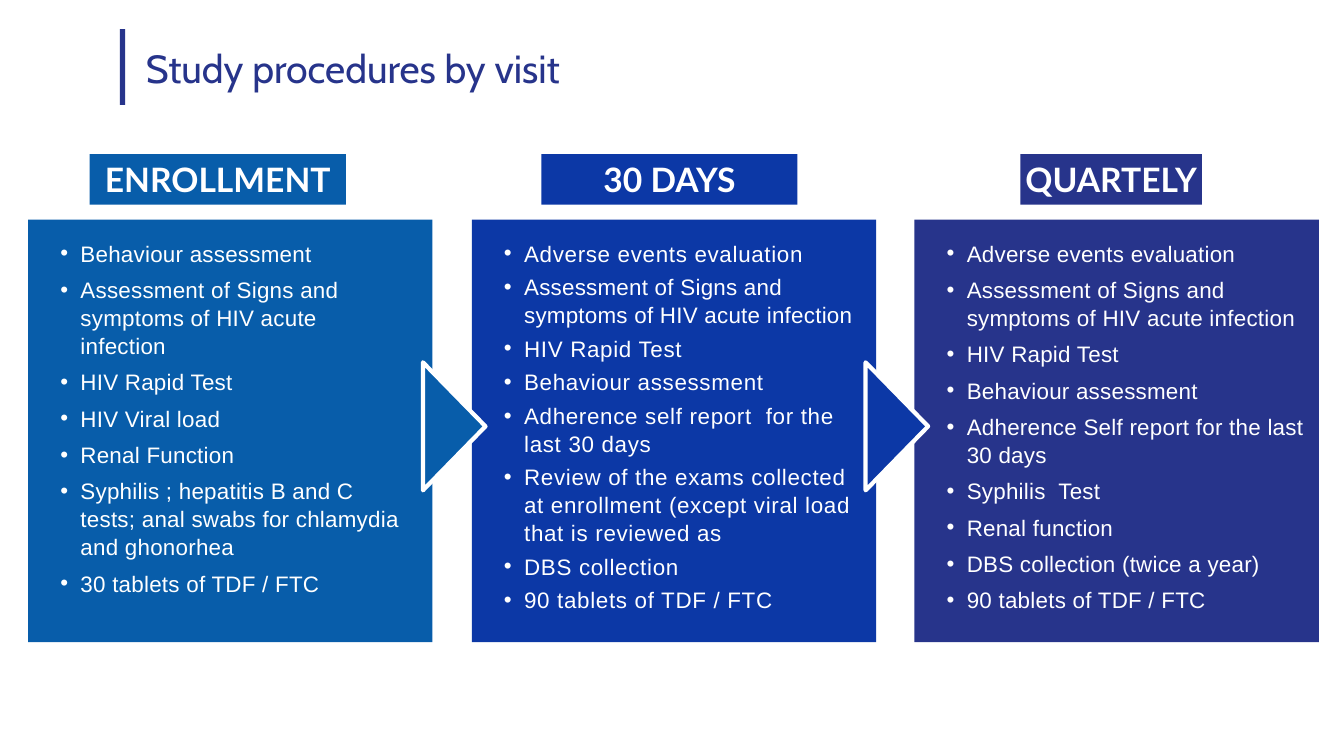
from lxml import etree
from pptx import Presentation
from pptx import util as u
from pptx.dml.color import RGBColor
from pptx.enum import shapes, text
from pptx.oxml.ns import qn

WHITE = RGBColor(0xFF, 0xFF, 0xFF)
SKY = RGBColor(0x08, 0x5D, 0xAA)
ROYAL = RGBColor(0x0C, 0x38, 0xA6)
NAVY = RGBColor(0x27, 0x34, 0x8B)

CARD_TOP, CARD_WIDTH, CARD_HEIGHT = 2.18, 4.01, 4.19
LABEL_TOP, LABEL_HEIGHT = 1.53, 0.5
ARROW_BASE, ARROW_DEPTH = 1.27, 0.62
SIGNS = "Assessment of Signs and symptoms of HIV acute infection"

VISITS = [
    dict(name="ENROLLMENT", color=SKY, left=0.28, label=(0.89, 2.54),
         body_width=3.6, gap=6, tracking=20, procedures=[
             "Behaviour assessment", SIGNS, "HIV Rapid Test", "HIV Viral load",
             "Renal Function",
             "Syphilis ; hepatitis B and C tests; anal swabs for chlamydia and ghonorhea",
             "30 tablets of TDF / FTC"]),
    dict(name="30 DAYS", color=ROYAL, left=4.68, label=(5.37, 2.54),
         body_width=3.79, gap=4, tracking=50, procedures=[
             "Adverse events evaluation", SIGNS, "HIV Rapid Test",
             "Behaviour assessment",
             "Adherence self report  for the last 30 days",
             "Review of the exams collected at enrollment (except viral load that is reviewed as",
             "DBS collection", "90 tablets of TDF / FTC"]),
    dict(name="QUARTELY", color=NAVY, left=9.07, label=(10.12, 1.8),
         body_width=3.79, gap=6, tracking=20, procedures=[
             "Adverse events evaluation", SIGNS, "HIV Rapid Test",
             "Behaviour assessment", "Adherence Self report for the last 30 days",
             "Syphilis  Test", "Renal function", "DBS collection (twice a year)",
             "90 tablets of TDF / FTC"]),
]


class VisitSlide:
    """Draws the parts of a visit overview on one slide."""

    def __init__(self, slide):
        self.slide = slide

    def block(self, left, top, width, height, color,
              kind=shapes.MSO_SHAPE.RECTANGLE):
        block = self.slide.shapes.add_shape(
            kind, *map(u.Inches, (left, top, width, height)))
        block.shadow.inherit = False
        block.fill.solid()
        block.fill.fore_color.rgb = color
        block.line.fill.background()
        return block

    def style(self, paragraph, face, size, color, bold=False):
        font = paragraph.font
        font.name, font.size, font.bold = face, u.Pt(size), bold
        font.color.rgb = color

    def title(self, words):
        self.block(1.19, 0.29, 0.05, 0.75, NAVY)
        title = self.slide.shapes.add_textbox(
            *map(u.Inches, (1.35, 0.3, 11.16, 0.75)))
        frame = title.text_frame
        frame.word_wrap = True
        frame.vertical_anchor = text.MSO_ANCHOR.MIDDLE
        frame.text = words
        self.style(frame.paragraphs[0], "Cabin", 28, NAVY)

    def label(self, name, left, width, color):
        label = self.block(left, LABEL_TOP, width, LABEL_HEIGHT, color)
        frame = label.text_frame
        frame.margin_left = frame.margin_right = 0
        frame.text = name
        heading = frame.paragraphs[0]
        heading.alignment = text.PP_ALIGN.CENTER
        self.style(heading, "Lato", 24, WHITE, bold=True)

    def procedures(self, items, left, width, gap, tracking):
        body = self.slide.shapes.add_textbox(
            *map(u.Inches, (left, 2.32, width, 3.74)))
        frame = body.text_frame
        frame.word_wrap = True
        for index, item in enumerate(items):
            procedure = frame.paragraphs[0] if index == 0 else frame.add_paragraph()
            run = procedure.add_run()
            run.text = item
            run_tracking = 20 if item == SIGNS else tracking
            run._r.get_or_add_rPr().set("spc", str(run_tracking))
            procedure.line_spacing = 1.04
            procedure.space_after = u.Pt(gap)
            properties = procedure._p.get_or_add_pPr()
            properties.set("marL", str(u.Inches(0.2)))
            properties.set("indent", str(-u.Inches(0.2)))
            etree.SubElement(properties, qn("a:buFont"), typeface="Arial")
            etree.SubElement(properties, qn("a:buChar"), char="•")
            self.style(procedure, "Arial", 16, WHITE)

    def visit(self, name, color, left, label, body_width, gap, tracking, procedures):
        self.block(left, CARD_TOP, CARD_WIDTH, CARD_HEIGHT, color)
        self.procedures(procedures, left + 0.22, body_width, gap, tracking)
        self.label(name, *label, color)

    def arrow(self, next_left, color):
        arrow = self.block(next_left - 0.81, 3.92, ARROW_BASE, ARROW_DEPTH, color,
                           shapes.MSO_SHAPE.ISOSCELES_TRIANGLE)
        arrow.rotation = 90
        arrow.line.color.rgb = WHITE
        arrow.line.width = u.Pt(3)


def main():
    deck = Presentation()
    deck.slide_width, deck.slide_height = u.Inches(13.33), u.Inches(7.5)
    page = VisitSlide(deck.slides.add_slide(deck.slide_layouts[6]))
    page.title("Study procedures by visit")
    for visit in VISITS:
        page.visit(**visit)
    for current, following in zip(VISITS, VISITS[1:]):
        page.arrow(following["left"], current["color"])
    deck.save("out.pptx")


if __name__ == "__main__":
    main()
